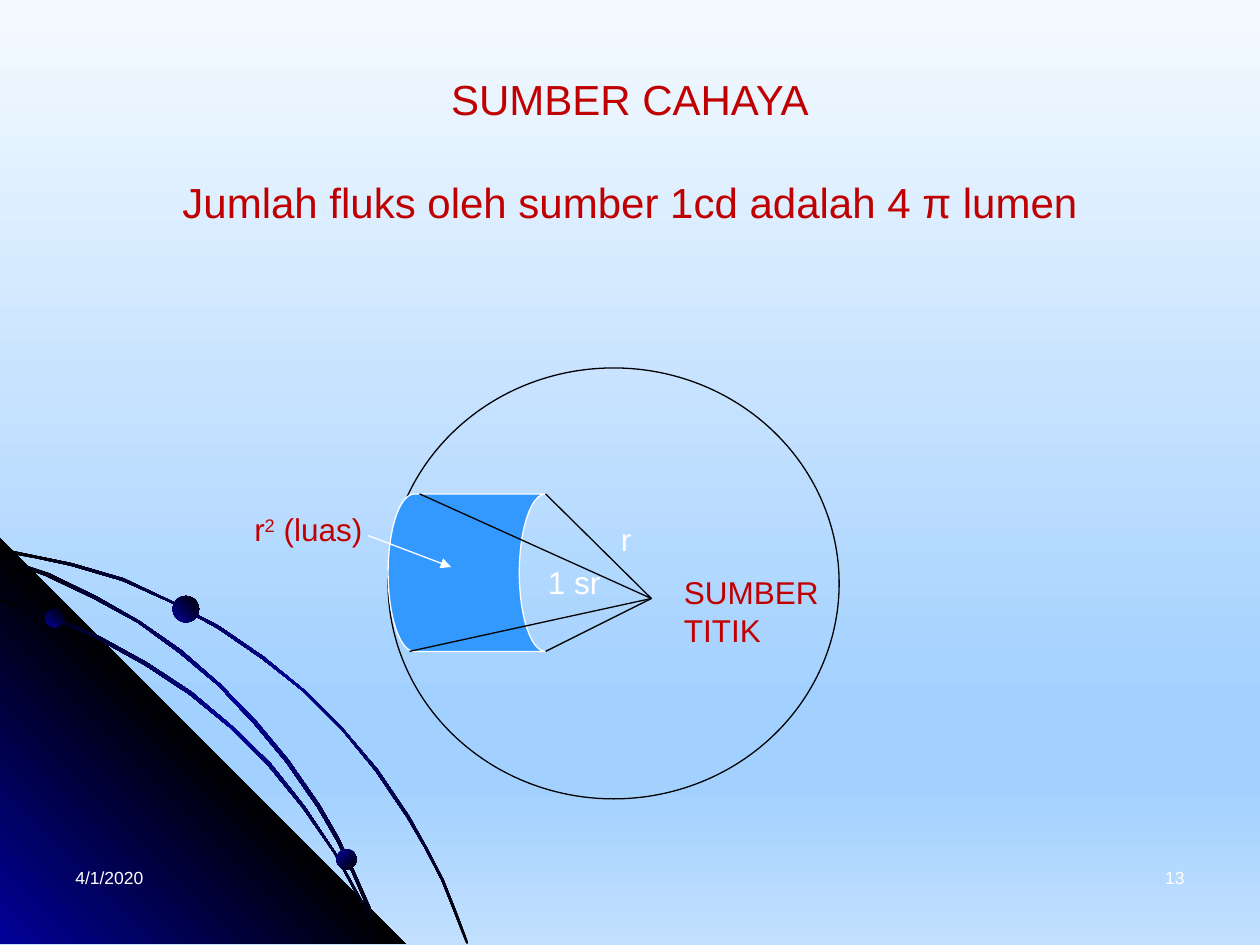
import pptx
import pptx.dml.color
import pptx.enum.shapes
import pptx.enum.text
import pptx.oxml.ns
import pptx.util
from dataclasses import dataclass
from lxml import etree

PX = 9144  # EMU in one px, 100 px to the inch
qn = pptx.oxml.ns.qn
SHAPE = pptx.enum.shapes.MSO_SHAPE
ALIGN = pptx.enum.text.PP_ALIGN
ANCHOR = pptx.enum.text.MSO_ANCHOR


@dataclass(frozen=True)
class Theme:
    font: str = "Arial"
    title: int = 24
    label: int = 18
    footer: int = 10
    red: str = "C00000"
    white: str = "FFFFFF"
    black: str = "000000"
    blue: str = "3399FF"
    navy: str = "010199"
    hairline: float = 0.75
    sky: tuple = ((0, "F5FAFF"), (74, "A3D1FF"), (83, "A3D1FF"), (100, "C2E0FF"))

    @property
    def dot(self):
        return (0, self.navy), (100, self.black)

    @property
    def arc(self):
        return (0, self.black), (50, self.navy), (100, self.black)

    @property
    def corner(self):
        return (0, self.navy), (50, self.black), (100, self.navy)


def rgb(value):
    return pptx.dml.color.RGBColor.from_string(value)


def set_gradient(fill, parent, stops, angle):
    """Fill with (percent, colour) stops; the angle runs clockwise."""
    fill.gradient()
    fill.gradient_angle = -angle % 360
    stop_list = parent.find(qn("a:gradFill")).find(qn("a:gsLst"))
    for old in list(stop_list):
        stop_list.remove(old)
    for percent, color in stops:
        stop = etree.SubElement(stop_list, qn("a:gs"), pos=str(percent * 1000))
        etree.SubElement(stop, qn("a:srgbClr"), val=color)


class Canvas:
    def __init__(self, slide, theme):
        self.s = slide
        self.theme = theme

    def background(self, stops, angle):
        fill = self.s.background.fill
        fill.gradient()
        parent = self.s.element.find(".//" + qn("p:bgPr"))
        set_gradient(fill, parent, stops, angle)

    def style(self, sp, fill, line, angle):
        """Fill is None, a colour or gradient stops; line is None or a colour."""
        sp.shadow.inherit = False
        if fill is None:
            sp.fill.background()
        elif isinstance(fill, str):
            sp.fill.solid()
            sp.fill.fore_color.rgb = rgb(fill)
        else:
            set_gradient(sp.fill, sp.element.spPr, fill, angle)
        if line is None:
            sp.line.fill.background()
        else:
            sp.line.color.rgb = rgb(line)
            sp.line.width = pptx.util.Pt(self.theme.hairline)

    def shape(self, kind, box, fill=None, line=None, angle=0):
        sp = self.s.shapes.add_shape(kind, *(v * PX for v in box))
        self.style(sp, fill, line, angle)

    def outline(self, points, fill, angle):
        builder = self.s.shapes.build_freeform(*points[0], scale=PX)
        builder.add_line_segments(points[1:], close=True)
        self.style(builder.convert_to_shape(), fill, None, angle)

    def line(self, start, end, color, arrow=False):
        cx = self.s.shapes.add_connector(
            pptx.enum.shapes.MSO_CONNECTOR.STRAIGHT, *(v * PX for v in start + end))
        cx.line.color.rgb = rgb(color)
        cx.line.width = pptx.util.Pt(self.theme.hairline)
        if arrow:
            etree.SubElement(cx.line._get_or_add_ln(), qn("a:tailEnd"), type="triangle")
        etree.SubElement(cx.element.spPr, qn("a:effectLst"))

    def text(self, box, paragraphs, size, color, align=ALIGN.LEFT,
             anchor=ANCHOR.TOP, gap=0):
        """Each paragraph is a list of (text, is_superscript); gap is in points."""
        tf = self.s.shapes.add_textbox(*(v * PX for v in box)).text_frame
        tf.word_wrap = True
        tf.vertical_anchor = anchor
        for i, parts in enumerate(paragraphs):
            p = tf.add_paragraph() if i else tf.paragraphs[0]
            p.alignment = align
            if i:
                p.space_before = pptx.util.Pt(gap)
            for words, raised in parts:
                r = p.add_run()
                r.text = words
                r.font.name = self.theme.font
                r.font.size = pptx.util.Pt(size)
                r.font.color.rgb = rgb(color)
                if raised:
                    r.font._element.set("baseline", "30000")


OUTER_ARC = [
    (57, 447), (28, 441), (0, 435), (0, 438), (28, 443), (56, 449), (97, 461),
    (135, 478), (173, 499), (208, 523), (241, 549), (271, 579), (298, 612),
    (323, 649), (337, 673), (350, 698), (360, 723), (370, 749), (372, 749),
    (362, 723), (352, 698), (339, 673), (325, 648), (300, 611), (272, 578),
    (242, 548), (209, 521), (174, 497), (136, 477), (98, 459)]
CORNER = [(322, 749), (0, 749), (0, 427)]
INNER_ARC = [
    (285, 714), (294, 732), (301, 749), (303, 749), (296, 730), (286, 712),
    (266, 676), (242, 640), (215, 606), (184, 576), (152, 549), (117, 526),
    (79, 505), (41, 488), (0, 475), (0, 477), (39, 490), (77, 507), (115, 528),
    (150, 551), (183, 578), (213, 608), (240, 641), (265, 677)]
MIDDLE_ARC = [
    (0, 442), (0, 444), (36, 457), (74, 475), (109, 494), (142, 518), (173, 544),
    (202, 575), (227, 605), (252, 641), (267, 667), (280, 694), (292, 722),
    (301, 749), (303, 749), (294, 720), (282, 693), (269, 665), (254, 639),
    (229, 603), (204, 573), (175, 543), (144, 516), (111, 493), (76, 473), (39, 455)]


def draw_decoration(c):
    t = c.theme
    c.outline(OUTER_ARC, t.arc, 45)
    c.outline(CORNER, t.corner, 315)
    c.outline(INNER_ARC, t.arc, 45)
    c.outline(MIDDLE_ARC, t.arc, 45)
    for x, y, size, angle in ((36, 483, 15, 315), (267, 674, 16, 45), (137, 473, 21, 315)):
        c.shape(SHAPE.OVAL, (x, y, size, size), t.dot, angle=angle)


def draw_sphere(c):
    t = c.theme
    c.shape(SHAPE.OVAL, (308, 292, 358, 342), line=t.black)
    c.shape(SHAPE.FLOWCHART_STORED_DATA, (308, 392, 125, 125), t.blue, t.white)
    point_source = (517, 475)
    for corner in ((333, 392), (433, 392), (325, 517), (433, 517)):
        c.line(corner, point_source, t.black)
    labels = (
        ((483, 408, 42, 40), [("r", False)], t.white),
        ((425, 442, 75, 40), [("1 sr", False)], t.white),
        ((192, 400, 117, 40), [("r", False), ("2", True), (" (luas)", False)], t.red),
        ((533, 450, 150, 70), [("SUMBER TITIK", False)], t.red))
    for box, parts, color in labels:
        c.text(box, [parts], t.label, color)
    c.line((292, 425), (358, 450), t.white, arrow=True)


def main():
    prs = pptx.Presentation()
    prs.slide_width, prs.slide_height = 1000 * PX, 750 * PX
    t = Theme()
    c = Canvas(prs.slides.add_slide(prs.slide_layouts[6]), t)
    c.background(t.sky, 90)
    draw_decoration(c)
    c.text((50, 683, 233, 50), [[("4/1/2020", False)]], t.footer, t.white)
    c.text((717, 683, 233, 50), [[("13", False)]], t.footer, t.white, ALIGN.RIGHT)
    c.text((50, 30, 900, 178),
           [[("SUMBER CAHAYA", False)],
            [("Jumlah fluks oleh sumber 1cd adalah 4 π lumen", False)]],
           t.title, t.red, ALIGN.CENTER, ANCHOR.MIDDLE, gap=30)
    draw_sphere(c)
    prs.save("out.pptx")


if __name__ == "__main__":
    main()
